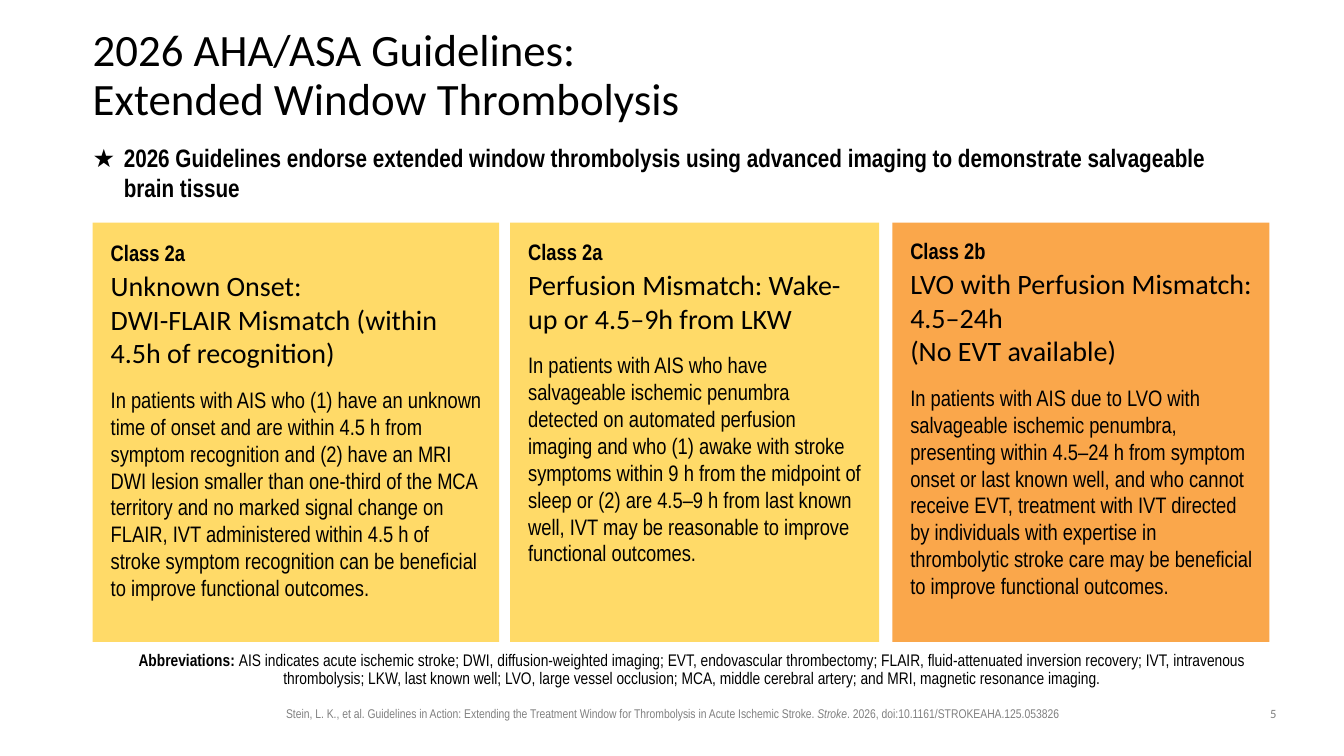
from dataclasses import dataclass

from pptx import Presentation
from pptx.dml.color import RGBColor as Rgb
from pptx.enum.shapes import MSO_SHAPE as Shape
from pptx.enum.text import MSO_ANCHOR as Anchor, PP_ALIGN as Align
from pptx.slide import Slide
from pptx.text.text import TextFrame as Frame
from pptx.util import Inches, Pt


@dataclass(frozen=True)
class Theme:
    head: str = "Calibri"
    body: str = "Arial Narrow"
    ink: str = "000000"
    gray: str = "808080"
    gold: str = "FFDA68"
    orange: str = "FAA74B"
    title: int = 32
    topic: int = 20
    lead: int = 18
    text: int = 16
    note: int = 12
    foot: int = 9


THEME = Theme()


@dataclass(frozen=True)
class Box:
    left: float
    top: float
    width: float
    height: float


@dataclass(frozen=True)
class Run:
    text: str
    size: int
    font: str = THEME.body
    color: str = THEME.ink
    bold: bool = False
    italic: bool = False


@dataclass(frozen=True)
class Para:
    runs: tuple[Run, ...]
    align: Align = Align.LEFT
    line: float = 1.0
    after: int = 0
    hang: float = 0


@dataclass(frozen=True)
class Card:
    left: float
    width: float
    top: float
    wrap: float
    fill: str
    grade: str
    topic: str
    text: str


CARD_TOP, CARD_TALL, INSET = 2.21, 4.16, 0.08

CARDS = (
    Card(0.92, 4.03, 2.32, 3.9, THEME.gold, "Class 2a",
         "Unknown Onset:\nDWI-FLAIR Mismatch (within 4.5h of recognition)",
         "In patients with AIS who (1) have an unknown time of onset and are within "
         "4.5 h from symptom recognition and (2) have an MRI DWI lesion smaller than "
         "one-third of the MCA territory and no marked signal change on FLAIR, IVT "
         "administered within 4.5 h of stroke symptom recognition can be beneficial "
         "to improve functional outcomes."),
    Card(5.06, 3.66, 2.31, 3.54, THEME.gold, "Class 2a",
         "Perfusion Mismatch: Wake-up or 4.5–9h from LKW",
         "In patients with AIS who have salvageable ischemic penumbra detected on "
         "automated perfusion imaging and who (1) awake with stroke symptoms within "
         "9 h from the midpoint of sleep or (2) are 4.5–9 h from last known well, "
         "IVT may be reasonable to improve functional outcomes."),
    Card(8.85, 3.74, 2.3, 3.66, THEME.orange, "Class 2b",
         "LVO with Perfusion Mismatch: 4.5–24h\n(No EVT available)",
         "In patients with AIS due to LVO with salvageable ischemic penumbra, "
         "presenting within 4.5–24 h from symptom onset or last known well, and who "
         "cannot receive EVT, treatment with IVT directed by individuals with "
         "expertise in thrombolytic stroke care may be beneficial to improve "
         "functional outcomes."),
)


def fill_para(frame: Frame, index: int, item: Para) -> None:
    para = frame.paragraphs[0] if index == 0 else frame.add_paragraph()
    para.alignment = item.align
    para.line_spacing = item.line
    para.space_after = Pt(item.after)
    if item.hang:
        props = para._p.get_or_add_pPr()
        props.set("marL", str(Inches(item.hang)))
        props.set("indent", str(-Inches(item.hang)))
    for part in item.runs:
        for count, line in enumerate(part.text.split("\n")):
            if count:
                para.add_line_break()
            run = para.add_run()
            run.text = line
            font = run.font
            font.name, font.size = part.font, Pt(part.size)
            font.bold, font.italic = part.bold, part.italic
            font.color.rgb = Rgb.from_string(part.color)


def add_text(slide: Slide, box: Box, *paras: Para, anchor: Anchor = Anchor.TOP,
             pad: tuple[float, ...] = (0.1, 0.05, 0.1, 0.05)) -> None:
    """Add a text box; pad runs left, top, right, bottom."""
    frame = slide.shapes.add_textbox(
        Inches(box.left), Inches(box.top), Inches(box.width), Inches(box.height)
    ).text_frame
    frame.word_wrap = True
    frame.vertical_anchor = anchor
    (frame.margin_left, frame.margin_top,
     frame.margin_right, frame.margin_bottom) = map(Inches, pad)
    for index, item in enumerate(paras):
        fill_para(frame, index, item)


def add_card(slide: Slide, card: Card) -> None:
    panel = slide.shapes.add_shape(
        Shape.RECTANGLE, Inches(card.left), Inches(CARD_TOP),
        Inches(card.width), Inches(CARD_TALL))
    panel.shadow.inherit = False
    panel.fill.solid()
    panel.fill.fore_color.rgb = Rgb.from_string(card.fill)
    panel.line.fill.background()
    add_text(
        slide, Box(card.left + INSET, card.top, card.wrap, 4),
        Para((Run(card.grade, THEME.text, bold=True),), after=2),
        Para((Run(card.topic, THEME.topic, THEME.head),), after=12),
        Para((Run(card.text, THEME.text),)))


def main() -> None:
    deck = Presentation()
    deck.slide_width, deck.slide_height = Inches(13.33), Inches(7.5)
    slide = deck.slides.add_slide(deck.slide_layouts[6])

    title = Run("2026 AHA/ASA Guidelines:\nExtended Window Thrombolysis",
                THEME.title, THEME.head)
    add_text(slide, Box(0.92, 0.4, 11.5, 0.72), Para((title,), line=0.9),
             anchor=Anchor.MIDDLE, pad=(0, 0, 0, 0))

    lead = Run("★\t2026 Guidelines endorse extended window thrombolysis using "
               "advanced imaging to demonstrate salvageable brain tissue",
               THEME.lead, bold=True)
    add_text(slide, Box(0.82, 1.36, 11.64, 0.71), Para((lead,), hang=0.31))

    for card in CARDS:
        add_card(slide, card)

    terms = (
        Run("Abbreviations: ", THEME.note, bold=True),
        Run("AIS indicates acute ischemic stroke; DWI, diffusion-weighted imaging; "
            "EVT, endovascular thrombectomy; FLAIR, fluid-attenuated inversion "
            "recovery; IVT, intravenous thrombolysis; LKW, last known well; LVO, "
            "large vessel occlusion; MCA, middle cerebral artery; and MRI, magnetic "
            "resonance imaging.", THEME.note))
    add_text(slide, Box(1.06, 6.24, 11.71, 0.64), Para(terms, Align.CENTER, 0.9),
             anchor=Anchor.BOTTOM, pad=(0, 0.05, 0.1, 0.05))

    cite = (
        Run("Stein, L. K., et al. Guidelines in Action: Extending the Treatment "
            "Window for Thrombolysis in Acute Ischemic Stroke. ",
            THEME.foot, color=THEME.gray),
        Run("Stroke", THEME.foot, color=THEME.gray, italic=True),
        Run(". 2026, doi:10.1161/STROKEAHA.125.053826", THEME.foot, color=THEME.gray))
    add_text(slide, Box(2.36, 6.95, 8.62, 0.25), Para(cite, Align.CENTER))

    page = Run("5", THEME.foot, THEME.head, THEME.gray)
    add_text(slide, Box(12.42, 6.95, 0.42, 0.26), Para((page,), Align.CENTER))

    deck.save("out.pptx")


if __name__ == "__main__":
    main()
